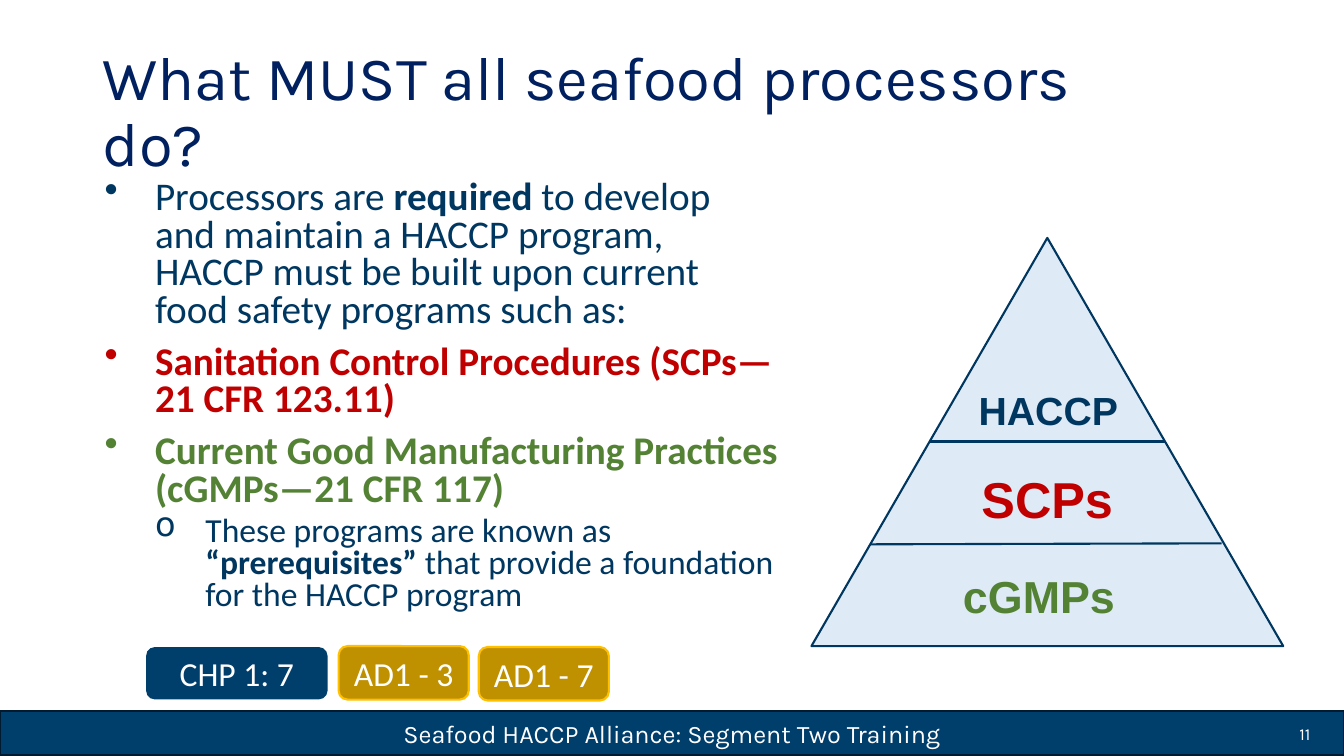
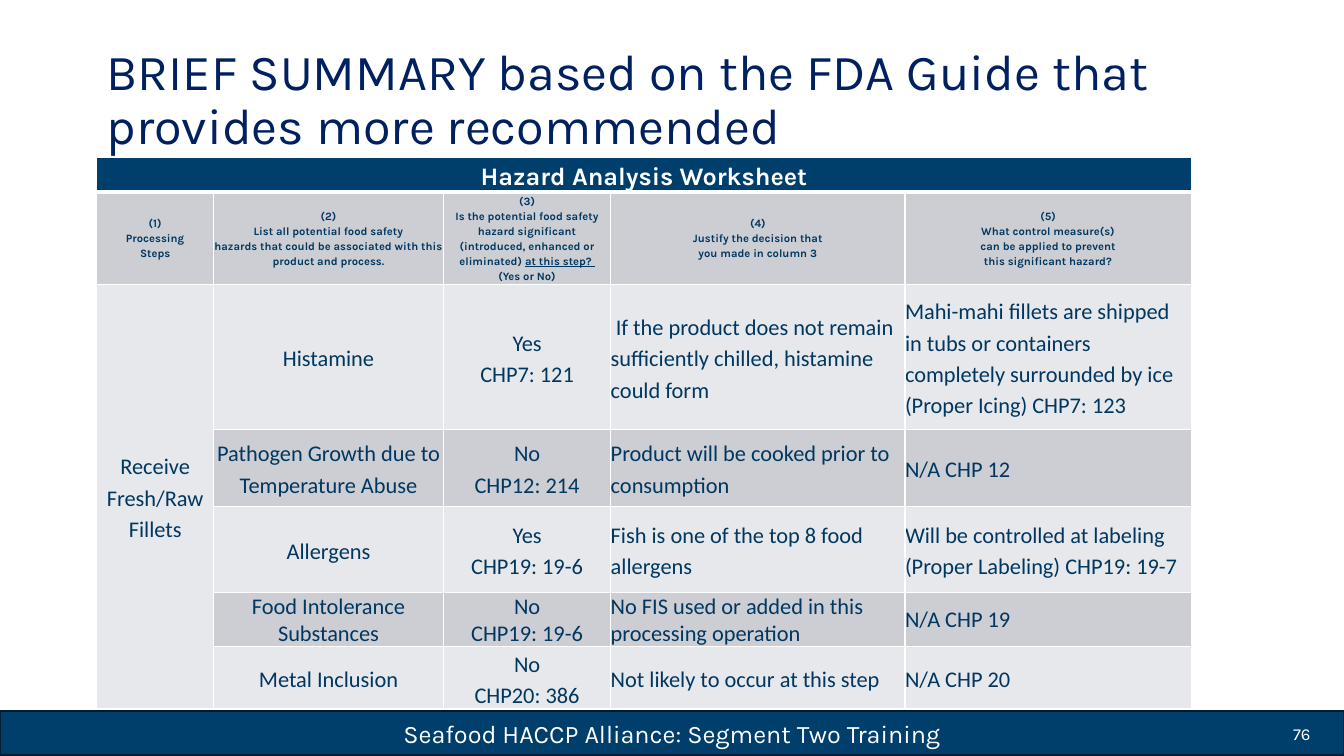
from dataclasses import dataclass
from typing import NamedTuple

from lxml import etree
from pptx import Presentation
from pptx.dml.color import RGBColor
from pptx.enum.shapes import MSO_CONNECTOR, MSO_SHAPE
from pptx.enum.text import MSO_ANCHOR, PP_ALIGN
from pptx.oxml.ns import qn
from pptx.shapes.autoshape import Shape
from pptx.slide import Slide
from pptx.table import _Cell
from pptx.text.text import TextFrame, _Paragraph
from pptx.util import Pt

RECT, ROUND = MSO_SHAPE.RECTANGLE, MSO_SHAPE.ROUNDED_RECTANGLE
PEAK, LINE = MSO_SHAPE.ISOSCELES_TRIANGLE, MSO_CONNECTOR.STRAIGHT
LEFT, MID, RIGHT = PP_ALIGN.LEFT, PP_ALIGN.CENTER, PP_ALIGN.RIGHT
TOP, CORE = MSO_ANCHOR.TOP, MSO_ANCHOR.MIDDLE


@dataclass(frozen=True)
class Theme:
    wide: float = 960
    high: float = 540
    head: str = "Karla"
    body: str = "Calibri"
    label: str = "Arial"
    white: str = "FFFFFF"
    band: str = "003E6C"
    edge: str = "001B2F"
    title: str = "002060"
    ink: str = "003760"
    red: str = "C00000"
    green: str = "548235"
    pale: str = "DEEBF7"
    gold: str = "BF9000"
    amber: str = "FFC000"
    dark: str = "CCCED4"
    light: str = "E7E8EB"
    foot: float = 18
    page: float = 12
    lead: float = 28
    sub: float = 24
    cell: float = 16
    tiny: float = 8
    rule: float = 1.5


T = Theme()


class Box(NamedTuple):
    x: float
    y: float
    w: float
    h: float


class Style(NamedTuple):
    size: float
    font: str = T.body
    color: str = T.white
    bold: bool = False
    align: PP_ALIGN = LEFT
    space: float = 1.0


class Item(NamedTuple):
    text: str
    style: Style
    mark: str
    left: float
    gap: float


class Label(NamedTuple):
    text: str
    box: Box
    size: float
    color: str


class Badge(NamedTuple):
    text: str
    box: Box
    fill: str
    edge: str


# Text: parts between asterisks are bold, or underlined in bold text
def write(par: _Paragraph, text: str, style: Style) -> None:
    par.alignment, par.line_spacing = style.align, style.space
    for i, part in enumerate(text.split("*")):
        for j, line in enumerate(part.split("\n")):
            if j:
                par.add_line_break()
            run = par.add_run()
            run.text = line
            font = run.font
            font.size, font.name = Pt(style.size), style.font
            font.color.rgb = RGBColor.from_string(style.color)
            font.bold = style.bold or i % 2 == 1
            if style.bold and i % 2:
                font.underline = True


def place(box: Box) -> tuple[Pt, Pt, Pt, Pt]:
    return Pt(box.x), Pt(box.y), Pt(box.w), Pt(box.h)


def add_text(slide: Slide, box: Box, anchor: MSO_ANCHOR = CORE) -> TextFrame:
    frame = slide.shapes.add_textbox(*place(box)).text_frame
    frame.word_wrap, frame.vertical_anchor = True, anchor
    return frame


def add_form(slide: Slide, kind: MSO_SHAPE, box: Box, fill: str, edge: str = "") -> Shape:
    form = slide.shapes.add_shape(kind, *place(box))
    form.shadow.inherit = False
    form.fill.solid()
    form.fill.fore_color.rgb = RGBColor.from_string(fill)
    if edge:
        form.line.color.rgb = RGBColor.from_string(edge)
        form.line.width = Pt(T.rule)
    else:
        form.line.fill.background()
    form.text_frame.vertical_anchor = CORE
    return form


def add_line(slide: Slide, x: float, y: float, to_x: float, to_y: float) -> None:
    line = slide.shapes.add_connector(LINE, Pt(x), Pt(y), Pt(to_x), Pt(to_y))
    line.line.color.rgb = RGBColor.from_string(T.ink)
    line.line.width = Pt(T.rule)
    etree.SubElement(line._element.spPr, qn("a:effectLst"))


def set_mark(par: _Paragraph, item: Item) -> None:
    props = par._p.get_or_add_pPr()
    props.set("marL", str(Pt(item.left)))
    props.set("indent", str(Pt(-36)))
    etree.SubElement(props, qn("a:buChar")).set("char", item.mark)


# Shared slide frame: footer band, title and page number
def add_slide(deck: Presentation, title: str, box: Box, size: float, page: str) -> Slide:
    slide = deck.slides.add_slide(deck.slide_layouts[6])
    band = add_form(slide, RECT, Box(0, 508, T.wide, 31.7), T.band, T.edge)
    write(band.text_frame.paragraphs[0], "Seafood HACCP Alliance: Segment Two Training",
          Style(T.foot, T.head, align=MID))
    write(add_text(slide, box).paragraphs[0], title,
          Style(size, T.head, T.title, space=0.9))
    write(add_text(slide, Box(727.2, 509.8, 216, 28.8)).paragraphs[0], page,
          Style(T.page, T.head, align=RIGHT))
    return slide


# Slide with bullets and pyramid
LEAD = Style(T.lead, color=T.ink, space=0.8)
ITEMS = [
    Item("Processors are *required* to develop \nand maintain a HACCP program, HACCP must be "
         "built upon current food safety programs such as:", LEAD, "•", 36, 0),
    Item("Sanitation Control Procedures (SCPs—21 CFR 123.11)",
         LEAD._replace(color=T.red, bold=True), "•", 36, 10),
    Item("Current Good Manufacturing Practices (cGMPs—21 CFR 117)",
         LEAD._replace(color=T.green, bold=True), "•", 36, 10),
    Item("These programs are known as *“prerequisites” *that provide a foundation for the "
         "HACCP program", LEAD._replace(size=T.sub), "o", 72, 5),
]
LABELS = [
    Label("HACCP", Box(691.2, 272.2, 115.2, 37.4), 28, T.ink),
    Label("SCPs", Box(679.7, 330.5, 136.8, 49.7), 36, T.red),
    Label("cGMPs ", Box(630, 402.5, 233.3, 46.1), 32, T.green),
]
BADGES = [
    Badge("CHP 1: 7", Box(104.4, 462.2, 129.6, 37.4), T.band, ""),
    Badge("AD1 - 3", Box(241.9, 461.5, 92.9, 38.2), T.gold, T.amber),
    Badge("AD1 - 7", Box(342, 462.2, 92.9, 38.2), T.gold, T.amber),
]


def draw_duty(deck: Presentation) -> None:
    slide = add_slide(deck, "What MUST all seafood processors do?",
                      Box(66.2, 28.8, 761.8, 104.4), 44, "11")
    frame = add_text(slide, Box(67.7, 125.3, 496.8, 342.7), TOP)
    for i, item in enumerate(ITEMS):
        par = frame.add_paragraph() if i else frame.paragraphs[0]
        set_mark(par, item)
        par.space_before = Pt(item.gap)
        write(par, item.text, item.style)

    # Pyramid
    add_form(slide, PEAK, Box(579.6, 169.9, 337, 291.6), T.pale, T.ink)
    add_line(slide, 621.4, 388.8, 872.6, 388.1)
    add_line(slide, 663.8, 315.4, 832.3, 315.4)
    for tag in LABELS:
        frame = add_form(slide, RECT, tag.box, T.pale).text_frame
        frame.vertical_anchor, frame.word_wrap = TOP, False
        write(frame.paragraphs[0], tag.text, Style(tag.size, T.label, tag.color, True, MID))

    # Chapter badges
    for badge in BADGES:
        frame = add_form(slide, ROUND, badge.box, badge.fill, badge.edge).text_frame
        frame.word_wrap = False
        write(frame.paragraphs[0], badge.text, Style(T.sub, align=MID))


# Slide with worksheet table
COLS = [83.5, 164.2, 119.5, 210.2, 204.5]
ROWS = [22.3, 62.6, 103.7, 54.7, 61.9, 36.7, 41]
TIGHT = 5
CELLS = [
    ["Hazard Analysis Worksheet", "", "", "", ""],
    ["(1)\nProcessing\nSteps",
     "(2)\nList all potential food safety\n"
     "hazards that could be associated with this product and process.",
     "(3)\nIs the potential food safety hazard significant (introduced, enhanced or "
     "eliminated) *at this step? *\n(Yes or No)",
     "(4)\nJustify the decision that\nyou made in column 3",
     "(5)\nWhat control measure(s)\ncan be applied to prevent\nthis significant hazard?"],
    ["Receive Fresh/Raw Fillets", "Histamine", "Yes\nCHP7: 121",
     " If the product does not remain sufficiently chilled, histamine could form",
     "Mahi-mahi fillets are shipped in tubs or containers completely surrounded by ice "
     "(Proper Icing) CHP7: 123"],
    ["", "Pathogen Growth due to Temperature Abuse", "No\nCHP12: 214",
     "Product will be cooked prior to consumption", "N/A CHP 12"],
    ["", "Allergens", "Yes\nCHP19: 19-6", "Fish is one of the top 8 food allergens",
     "Will be controlled at labeling (Proper Labeling) CHP19: 19-7"],
    ["", "Food Intolerance Substances", "No\nCHP19: 19-6",
     "No FIS used or added in this processing operation", "N/A CHP 19"],
    ["", "Metal Inclusion", "No\nCHP20: 386", "Not likely to occur at this step",
     "N/A CHP 20"],
]


def set_edge(cell: _Cell, base: float) -> None:
    props = cell._tc.get_or_add_tcPr()
    for side, width in (("L", 1), ("R", 1), ("T", 1), ("B", base)):
        line = etree.SubElement(props, qn(f"a:ln{side}"), w=str(Pt(width)))
        fill = etree.SubElement(line, qn("a:solidFill"))
        etree.SubElement(fill, qn("a:srgbClr"), val=T.white)


def cell_style(row: int, col: int) -> Style:
    if row == 0:
        return Style(T.foot, T.head, T.white, True, MID, 1.15)
    if row == 1:
        return Style(T.tiny, T.head, T.ink, True, MID, 1.15)
    return Style(T.cell, color=T.ink, align=MID if col < 3 else LEFT,
                 space=1.0 if row == TIGHT else 1.15)


def cell_fill(row: int, col: int) -> str:
    if row == 0:
        return T.band
    return T.dark if row % 2 and (col or row == 1) else T.light


def draw_sheet(deck: Presentation) -> None:
    slide = add_slide(deck, "BRIEF SUMMARY based on the FDA Guide that provides more recommended",
                      Box(69.1, 20.2, 852.5, 104.4), 36, "76")
    box = Box(69.1, 112.3, sum(COLS), sum(ROWS))
    table = slide.shapes.add_table(len(ROWS), len(COLS), *place(box)).table
    table.first_row = table.horz_banding = False
    for col, width in enumerate(COLS):
        table.columns[col].width = Pt(width)
    for row, height in enumerate(ROWS):
        table.rows[row].height = Pt(height)
    table.cell(0, 0).merge(table.cell(0, len(COLS) - 1))
    table.cell(2, 0).merge(table.cell(len(ROWS) - 1, 0))

    for row, texts in enumerate(CELLS):
        for col, text in enumerate(texts):
            cell = table.cell(row, col)
            set_edge(cell, 1 if row else 3)
            cell.fill.solid()
            cell.fill.fore_color.rgb = RGBColor.from_string(cell_fill(row, col))
            cell.margin_left = cell.margin_right = Pt(0)
            cell.margin_top = cell.margin_bottom = Pt(0)
            cell.vertical_anchor = CORE
            if not text:
                continue
            frame = cell.text_frame
            for i, line in enumerate(text.split("\n")):
                par = frame.add_paragraph() if i else frame.paragraphs[0]
                write(par, line, cell_style(row, col))


def main() -> None:
    deck = Presentation()
    deck.slide_width, deck.slide_height = Pt(T.wide), Pt(T.high)
    draw_duty(deck)
    draw_sheet(deck)
    deck.save("out.pptx")


if __name__ == "__main__":
    main()
